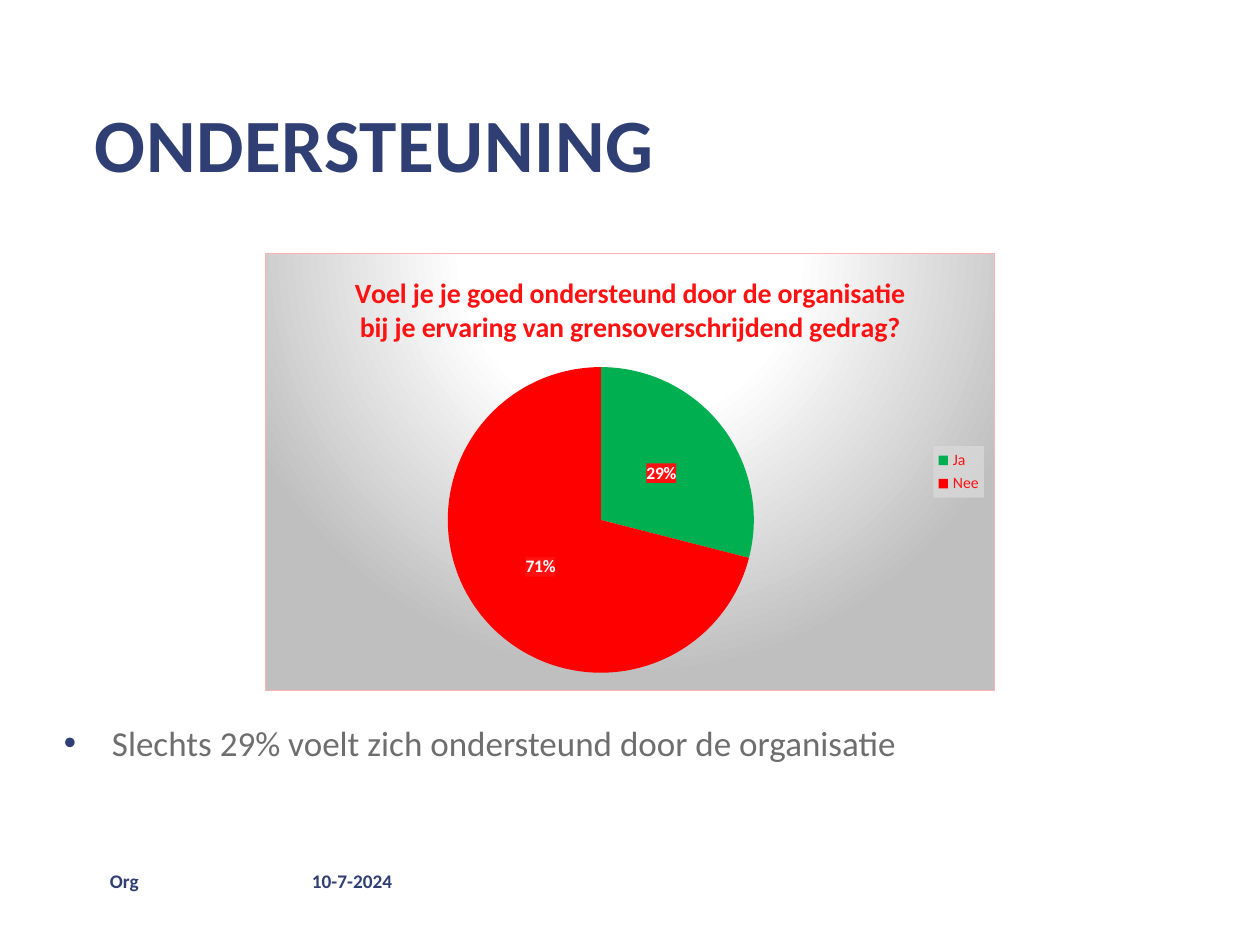
from lxml import etree
from pptx import Presentation
from pptx import util as u
from pptx.chart import data as chart_data
from pptx.dml import color
from pptx.enum import chart as charts, text
from pptx.oxml import parse_xml
from pptx.oxml.ns import nsdecls, qn

NAVY, RED, SOFT_RED = "2F3F73", "FF0000", "FF1111"
SCALE = 914400 / 126


def px(*lengths):
    return [u.Emu(round(length * SCALE)) for length in lengths]


def style(font, size, hex_color, bold=False):
    font.name = "Calibri"
    font.size = u.Pt(size)
    font.bold = bold
    font.color.rgb = color.RGBColor.from_string(hex_color)


prs = Presentation()
prs.slide_width, prs.slide_height = px(1260, 945)
slide = prs.slides.add_slide(prs.slide_layouts[5])

heading = slide.shapes.title
heading.left, heading.top, heading.width, heading.height = px(95, 97, 794, 91)
footer = slide.shapes.add_textbox(*px(110, 868, 189, 25))
date = slide.shapes.add_textbox(*px(312, 868, 164, 25))
conclusion = slide.shapes.add_textbox(*px(64, 721, 1196, 208))

for box, words, size, hex_color, bold, wrap, anchor in [
    (heading, "ONDERSTEUNING", 43, NAVY, True, False, text.MSO_ANCHOR.TOP),
    (footer, "Org", 11, NAVY, True, True, text.MSO_ANCHOR.MIDDLE),
    (date, "10-7-2024", 11, NAVY, True, False, text.MSO_ANCHOR.MIDDLE),
    (conclusion, "Slechts 29% voelt zich ondersteund door de organisatie",
     20, "6E6E6E", False, True, text.MSO_ANCHOR.TOP),
]:
    frame = box.text_frame
    frame.auto_size = text.MSO_AUTO_SIZE.NONE
    frame.margin_left = frame.margin_top = frame.margin_right = frame.margin_bottom = 0
    frame.word_wrap = wrap
    frame.vertical_anchor = anchor
    frame.paragraphs[0].alignment = text.PP_ALIGN.LEFT
    run = frame.paragraphs[0].add_run()
    run.text = words
    style(run.font, size, hex_color, bold)

heading.text_frame.paragraphs[0].runs[0].font._element.set("spc", "40")

bullet = conclusion.text_frame.paragraphs[0]._p.get_or_add_pPr()
indent = px(48)[0]
bullet.set("marL", str(indent))
bullet.set("indent", str(-indent))
bullet_color = etree.SubElement(bullet, qn("a:buClr"))
etree.SubElement(bullet_color, qn("a:srgbClr"), val=NAVY)
etree.SubElement(bullet, qn("a:buFont"), typeface="Arial")
etree.SubElement(bullet, qn("a:buChar"), char="•")

answers = chart_data.CategoryChartData()
answers.categories = ["Ja", "Nee"]
answers.add_series("Series 1", (29, 71))
support = slide.shapes.add_chart(
    charts.XL_CHART_TYPE.PIE, *px(265, 253, 730, 438), answers).chart
style(support.font, 10, "C00000")

support.has_title = True
question = support.chart_title.text_frame.paragraphs[0].add_run()
question.text = ("Voel je je goed ondersteund door de organisatie "
                 "bij je ervaring van grensoverschrijdend gedrag?")
style(question.font, 16, SOFT_RED, True)

support.has_legend = True
legend = support.legend
legend.position = charts.XL_LEGEND_POSITION.RIGHT
legend.include_in_layout = False
style(legend.font, 9, SOFT_RED)

pie = support.plots[0]
pie.vary_by_categories = True
for index, hex_color in enumerate(("00B050", RED)):
    slice_fill = pie.series[0].points[index].format.fill
    slice_fill.solid()
    slice_fill.fore_color.rgb = color.RGBColor.from_string(hex_color)

labels = pie.series[0].data_labels
labels.show_percentage = True
labels.show_value = False
labels.number_format = "0%"
labels.number_format_is_linked = False
labels.position = charts.XL_LABEL_POSITION.CENTER
style(labels.font, 10, "FFFFFF", True)

for part, hex_color, alpha in [(labels._element, SOFT_RED, 75000),
                               (legend._element, "D9D9D9", 78000)]:
    part.find(qn("c:txPr")).addprevious(parse_xml(
        f'<c:spPr {nsdecls("c", "a")}><a:solidFill><a:srgbClr val="{hex_color}">'
        f'<a:alpha val="{alpha}"/></a:srgbClr></a:solidFill></c:spPr>'))

stops = "".join(
    f'<a:gs pos="{position}000"><a:srgbClr val="{hex_color}"/></a:gs>'
    for position, hex_color in [(0, "FFFFFF"), (39, "FFFFFF"), (100, "BFBFBF")])
chart_space = support._chartSpace
chart_space.find(qn("c:chart")).addnext(parse_xml(
    f'<c:spPr {nsdecls("c", "a")}><a:gradFill><a:gsLst>{stops}</a:gsLst>'
    '<a:path path="circle"><a:fillToRect l="50000" t="-80000" r="50000" b="180000"/>'
    '</a:path></a:gradFill><a:ln w="9525"><a:solidFill><a:srgbClr val="FFB0B0"/>'
    '</a:solidFill></a:ln></c:spPr>'))

plot_area = chart_space.find(".//" + qn("c:plotArea"))
for old_layout in plot_area.findall(qn("c:layout")):
    plot_area.remove(old_layout)
plot_area.insert(0, parse_xml(
    f'<c:layout {nsdecls("c")}><c:manualLayout><c:layoutTarget val="inner"/>'
    '<c:xMode val="edge"/><c:yMode val="edge"/><c:x val="0.25"/><c:y val="0.26"/>'
    '<c:w val="0.42"/><c:h val="0.7"/></c:manualLayout></c:layout>'))

prs.save("out.pptx")
